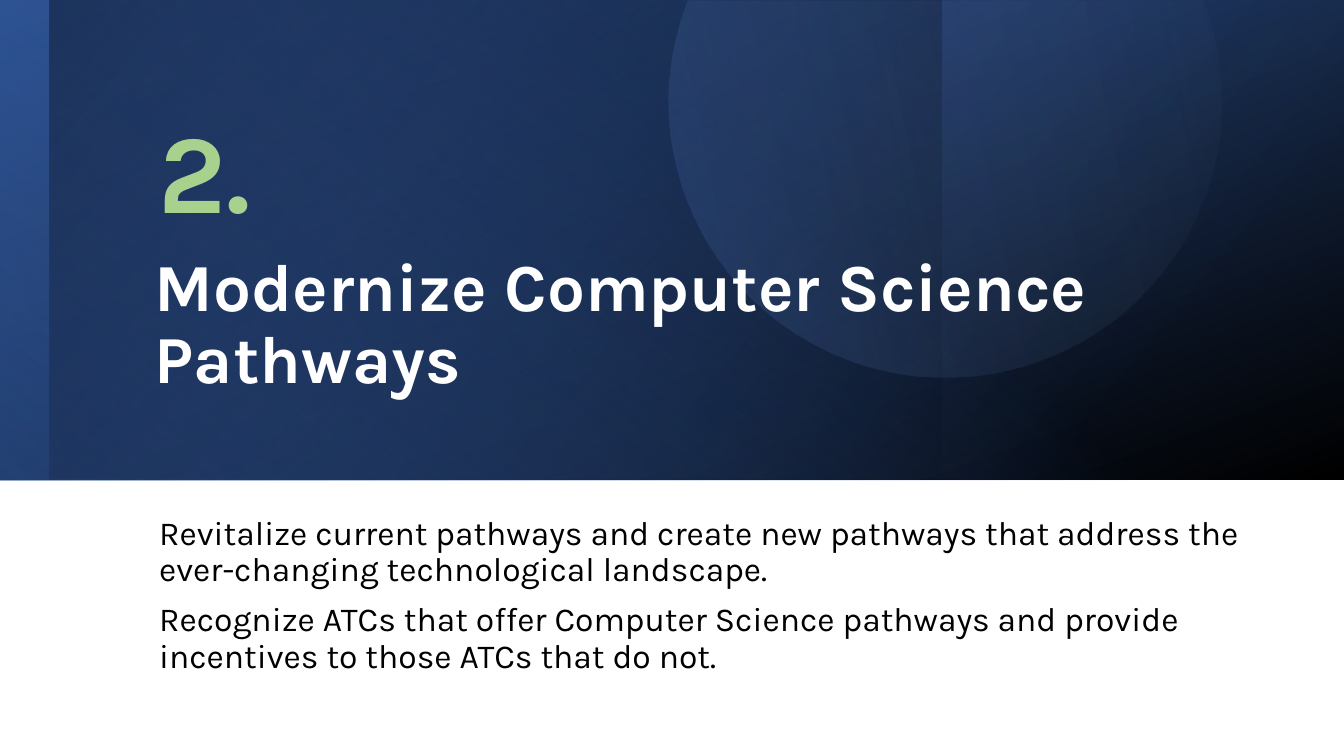
from dataclasses import dataclass
from itertools import pairwise
from math import cos, radians, sin, tan

from lxml.etree import SubElement
from pptx import Presentation
from pptx.dml.color import RGBColor
from pptx.enum.shapes import MSO_SHAPE
from pptx.enum.text import MSO_ANCHOR, MSO_AUTO_SIZE
from pptx.oxml.ns import qn
from pptx.util import Pt

PX = 9525  # EMU per px, 96 px to the inch


@dataclass(frozen=True)
class Theme:
    font: str = "Karla"
    white: str = "FFFFFF"
    black: str = "000000"
    green: str = "A9D18E"
    navy: str = "203864"
    deep: str = "2F5597"
    blue: str = "4472C4"
    pale: str = "8FAADC"
    digit: int = 80
    title: int = 48
    body: int = 24


@dataclass(frozen=True)
class Stop:
    at: int
    color: str
    alpha: int = 100


@dataclass(frozen=True)
class Fade:
    angle: int  # degrees clockwise
    start: Stop
    end: Stop


@dataclass(frozen=True)
class Band:
    x: int
    y: int
    w: int
    h: int
    turn: int
    fade: Fade


THEME = Theme()
BANDS = [
    Band(0, -2, 1280, 459, 180,
         Fade(250, Stop(0, THEME.deep), Stop(100, THEME.black))),
    Band(410, -412, 459, 1280, 90,
         Fade(40, Stop(40, THEME.blue, 0), Stop(100, THEME.deep, 52))),
    Band(434, -389, 459, 1232, 90,
         Fade(130, Stop(17, THEME.blue, 0), Stop(100, THEME.black, 37))),
    Band(0, -2, 897, 459, 0,
         Fade(310, Stop(0, THEME.navy, 0), Stop(100, THEME.black, 25))),
]
GLOW = Fade(140, Stop(0, THEME.blue, 22), Stop(87, THEME.pale, 2))


def paint(shape, fade: Fade) -> None:
    """Fill a shape with a two-stop linear gradient, without line or shadow."""
    shape.shadow.inherit = False
    shape.line.fill.background()
    shape.fill.gradient()
    grad = shape.fill._xPr.find(qn("a:gradFill"))
    for child in list(grad):
        grad.remove(child)
    grad.set("rotWithShape", "1")
    stops = SubElement(grad, qn("a:gsLst"))
    for stop in (fade.start, fade.end):
        node = SubElement(stops, qn("a:gs"), pos=str(stop.at * 1000))
        color = SubElement(node, qn("a:srgbClr"), val=stop.color)
        if stop.alpha < 100:
            SubElement(color, qn("a:alpha"), val=str(stop.alpha * 1000))
    SubElement(grad, qn("a:lin"), ang=str(fade.angle * 60000), scaled="0")


def add_band(slide, band: Band) -> None:
    box = (side * PX for side in (band.x, band.y, band.w, band.h))
    shape = slide.shapes.add_shape(MSO_SHAPE.RECTANGLE, *box)
    shape.rotation = band.turn
    paint(shape, band.fade)


def add_disc(slide, x: int, y: int, r: int, knots: list[int],
             turn: float, fade: Fade) -> None:
    """Draw a disc cut by a chord, with one curve from knot to knot."""
    def spot(angle: float, pull: float = 0) -> tuple[int, int]:
        """Point on the rim, moved along its tangent by pull radii."""
        c, s = cos(radians(angle)), sin(radians(angle))
        return (round((x + r * (c - pull * s)) * PX),
                round((y + r * (s + pull * c)) * PX))

    pen = slide.shapes.build_freeform(*spot(knots[-1]), scale=1.0)
    pen.add_line_segments([spot(a) for a in knots], close=True)
    shape = pen.convert_to_shape()

    # Bend every line after the chord
    lines = list(shape._element.iter(qn("a:lnTo")))[1:]
    for line, (a, b) in zip(lines, pairwise(knots)):
        pull = 4 / 3 * tan(radians(b - a) / 4)
        curve = line.makeelement(qn("a:cubicBezTo"))
        for px, py in (spot(a, pull), spot(b, -pull), spot(b)):
            SubElement(curve, qn("a:pt"), x=str(px - shape.left),
                       y=str(py - shape.top))
        line.getparent().replace(line, curve)
    shape.rotation = turn
    paint(shape, fade)


def add_text(slide, lines: list[str], x: int, y: int, w: int, h: int, *,
             size: int, color: str, bold: bool = False,
             anchor=MSO_ANCHOR.TOP, space: float = 1.0, before: int = 0,
             grow: bool = False) -> None:
    box = slide.shapes.add_textbox(x * PX, y * PX, w * PX, h * PX)
    frame = box.text_frame
    frame.word_wrap = True
    frame.vertical_anchor = anchor
    frame.auto_size = (MSO_AUTO_SIZE.SHAPE_TO_FIT_TEXT if grow
                       else MSO_AUTO_SIZE.NONE)
    for i, line in enumerate(lines):
        para = frame.add_paragraph() if i else frame.paragraphs[0]
        para.line_spacing = space
        para.space_before = Pt(before)
        run = para.add_run()
        run.text = line
        run.font.name = THEME.font
        run.font.size = Pt(size)
        run.font.bold = bold
        run.font.color.rgb = RGBColor.from_string(color)


def main() -> None:
    deck = Presentation()
    deck.slide_width, deck.slide_height = 1280 * PX, 720 * PX
    slide = deck.slides.add_slide(deck.slide_layouts[6])

    # Blue header
    for band in BANDS:
        add_band(slide, band)
    add_disc(slide, 887, 155, 263, [-230, -180, -90, -7], 208.5, GLOW)

    # Title, body and number
    add_text(slide, ["Modernize Computer Science Pathways"],
             138, 77, 1055, 307, size=THEME.title, color=THEME.white,
             bold=True, anchor=MSO_ANCHOR.BOTTOM, space=0.9)
    add_text(slide, [
        "Revitalize current pathways and create new pathways that address "
        "the ever-changing technological landscape.",
        "Recognize ATCs that offer Computer Science pathways and provide "
        "incentives to those ATCs that do not.",
    ], 142, 471, 1050, 193, size=THEME.body, color=THEME.black,
        anchor=MSO_ANCHOR.MIDDLE, space=0.9, before=10)
    add_text(slide, ["2."], 142, 92, 118, 139, size=THEME.digit,
             color=THEME.green, bold=True, grow=True)

    deck.save("out.pptx")


if __name__ == "__main__":
    main()
